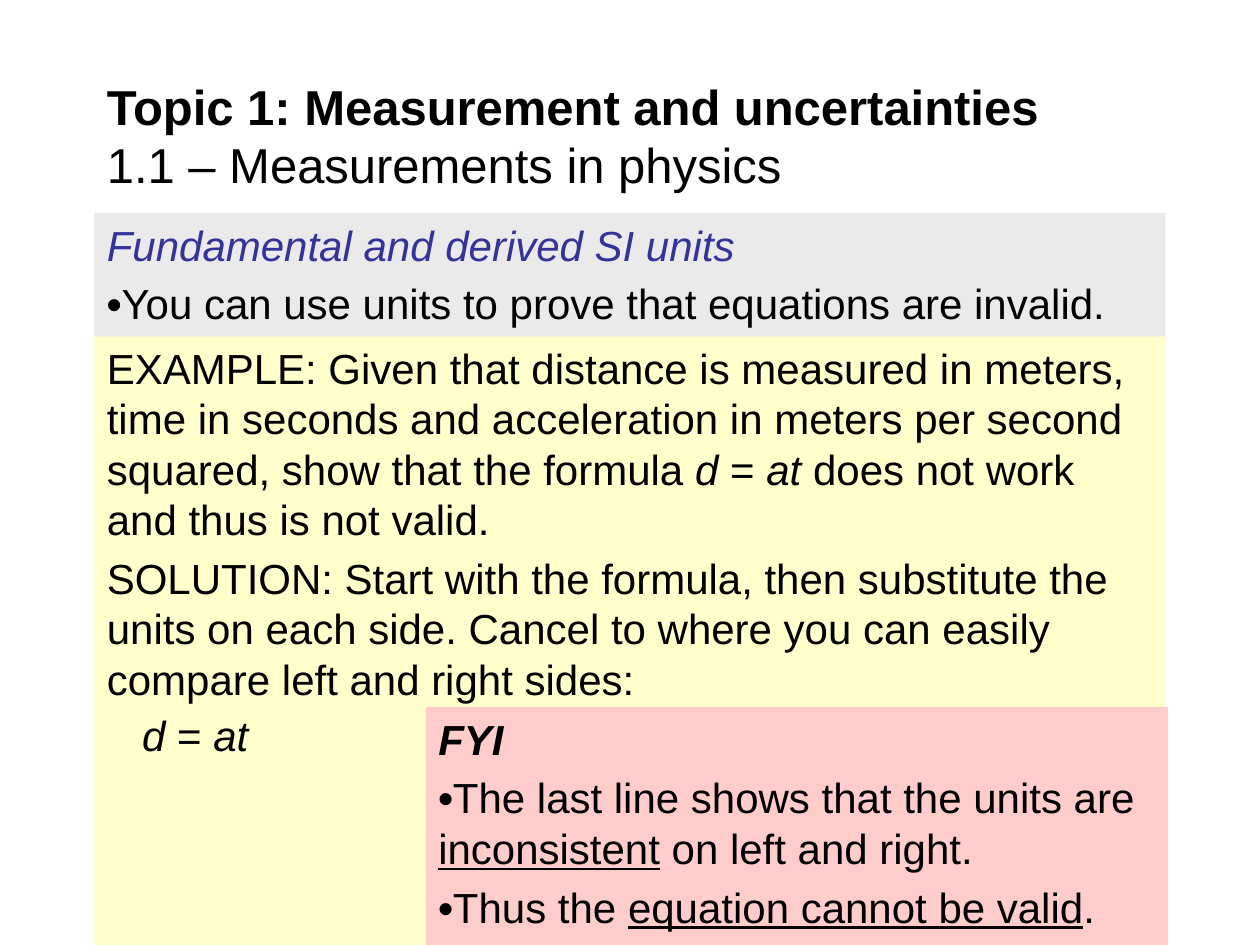
import pptx
import pptx.util
import pptx.dml.color
import pptx.enum.shapes
import pptx.enum.text

Inches = pptx.util.Inches
Pt = pptx.util.Pt
Anchor = pptx.enum.text.MSO_ANCHOR


def color(code):
    """Turn a hex string into a colour."""
    return pptx.dml.color.RGBColor.from_string(code)


def write(para, text, size=24, ink="000000", style=""):
    """Add one run; style holds any of the letters b, i and u."""
    run = para.add_run()
    run.text = text
    font = run.font
    font.name = "Arial"
    font.size = Pt(size)
    font.color.rgb = color(ink)
    font.bold = "b" in style
    font.italic = "i" in style
    font.underline = "u" in style


def fill(shape, paras, gap=4.8, pitch=None, anchor=Anchor.TOP):
    """Write paragraphs, each a list of (text, style) runs or a writer's options."""
    frame = shape.text_frame
    frame.word_wrap = True
    frame.vertical_anchor = anchor
    for i, runs in enumerate(paras):
        para = frame.add_paragraph() if i else frame.paragraphs[0]
        para.alignment = pptx.enum.text.PP_ALIGN.LEFT
        para.space_before = Pt(gap)
        if pitch:
            para.line_spacing = pitch
        for text, form in runs:
            write(para, text, **form)


def panel(slide, box, back, paras):
    """Draw a plain filled panel with text from its top."""
    kind = pptx.enum.shapes.MSO_SHAPE.RECTANGLE
    shape = slide.shapes.add_shape(kind, *map(Inches, box))
    shape.shadow.inherit = False
    shape.fill.solid()
    shape.fill.fore_color.rgb = color(back)
    shape.line.fill.background()
    fill(shape, paras)


def title(slide, box):
    """Write the topic over the section name."""
    shape = slide.shapes.add_textbox(*map(Inches, box))
    fill(shape, [[]], gap=0, anchor=Anchor.MIDDLE)
    para = shape.text_frame.paragraphs[0]
    write(para, "Topic 1: Measurement and uncertainties", size=28, style="b")
    para.add_line_break()
    write(para, "1.1 – Measurements in physics", size=28)


def intro(slide, box):
    """Draw the panel that names the subject."""
    panel(slide, box, "EAEAEA", [
        [("Fundamental and derived SI units", {"ink": "333399", "style": "i"})],
        [("•", BOLD),
         ("You can use units to prove that equations are invalid.", PLAIN)],
    ])


def task(slide, box):
    """Draw the worked example and the formula at its foot."""
    panel(slide, box, "FFFFCC", [
        [("EXAMPLE: Given that distance is measured in meters, time in seconds "
          "and acceleration in meters per second squared, show that the "
          "formula ", PLAIN),
         *FORMULA,
         (" does not work and thus is not valid.", PLAIN)],
        [("SOLUTION: Start with the formula, then substitute the units on each "
          "side. Cancel to where you can easily compare left and right sides:",
          PLAIN)],
    ])
    left, top = box[:2]
    place = (left + 0.28, top + 2.96, 1.47, 0.37)
    shape = slide.shapes.add_textbox(*map(Inches, place))
    fill(shape, [FORMULA], pitch=0.9)


def note(slide, box):
    """Draw the panel of closing remarks."""
    panel(slide, box, "FFCCCC", [
        [("FYI", {"style": "bi"})],
        [("•", BOLD), ("The last line shows that the units are ", PLAIN),
         ("inconsistent", LINED), (" on left and right.", PLAIN)],
        [("•", BOLD), ("Thus the ", PLAIN),
         ("equation cannot be valid", LINED), (".", PLAIN)],
    ])


PLAIN, BOLD, LINED, SLANT = ({"style": s} for s in ("", "b", "u", "i"))
FORMULA = [("d", SLANT), (" = ", PLAIN), ("at", SLANT)]


def main():
    """Build and save the slide."""
    deck = pptx.Presentation()
    deck.slide_width = Inches(10)
    deck.slide_height = Inches(7.5)
    slide = deck.slides.add_slide(deck.slide_layouts[6])
    intro(slide, (0.75, 1.69, 8.5, 1))
    title(slide, (0.75, 0.58, 8.5, 0.98))
    task(slide, (0.75, 2.67, 8.5, 4.83))
    note(slide, (3.38, 5.61, 5.89, 1.89))
    deck.save("out.pptx")


if __name__ == "__main__":
    main()
